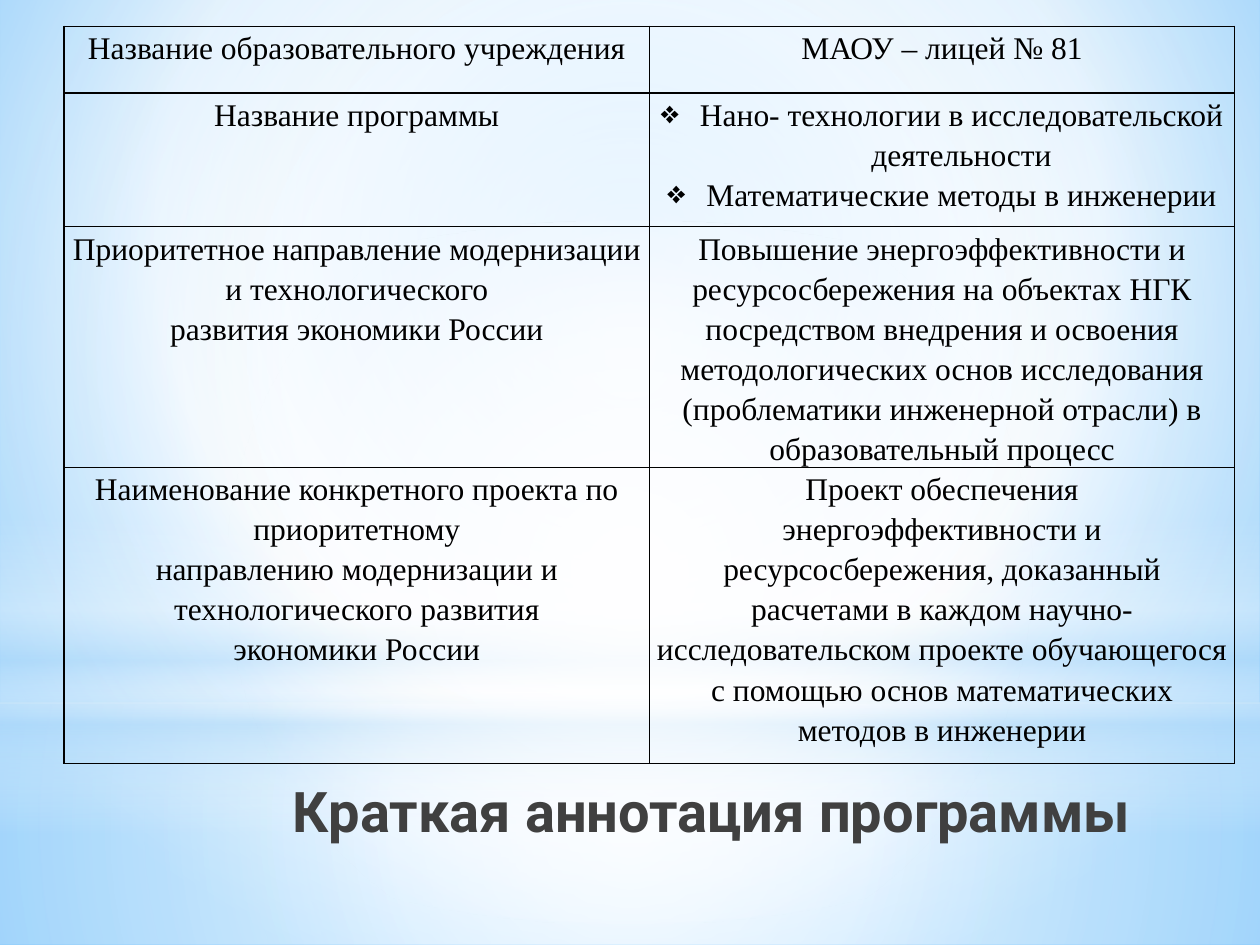
from lxml.etree import SubElement
from pptx import Presentation
from pptx.dml.color import RGBColor
from pptx.enum.shapes import MSO_SHAPE
from pptx.enum.text import MSO_ANCHOR, MSO_AUTO_SIZE, PP_ALIGN
from pptx.oxml.ns import qn
from pptx.util import Inches, Pt

COLORS = {
    "sky": "9ED5FF",
    "deep_sky": "5BB9FF",
    "haze": "B4DCFA",
    "white": "FFFFFF",
    "title": "404040",
    "ink": "000000",
}
TITLE = "Краткая аннотация программы"
BULLET = "❖"
ROW_HEIGHTS = (0.53, 1.06, 1.77, 2.35)
ROWS = [
    (["Название образовательного учреждения"], ["МАОУ – лицей № 81"]),
    (
        ["Название программы"],
        [
            BULLET + "Нано- технологии в исследовательской деятельности",
            BULLET + "Математические методы в инженерии",
        ],
    ),
    (
        [
            "Приоритетное направление модернизации и технологического",
            "развития экономики России",
        ],
        [
            "Повышение энергоэффективности и ресурсосбережения на объектах НГК "
            "посредством внедрения и освоения методологических основ исследования "
            "(проблематики инженерной отрасли) в образовательный процесс"
        ],
    ),
    (
        [
            "Наименование конкретного проекта по приоритетному",
            "направлению модернизации и технологического развития",
            "экономики России",
        ],
        [
            "Проект обеспечения энергоэффективности и ресурсосбережения, доказанный "
            "расчетами в каждом научно-исследовательском проекте обучающегося "
            "с помощью основ математических методов в инженерии"
        ],
    ),
]
CENTER = (50, 50, 50, 50)


def set_gradient(properties, stops, focus=None):
    solid = properties.find(qn("a:solidFill"))
    gradient = properties.makeelement(qn("a:gradFill"), {"rotWithShape": "1"})
    stop_list = SubElement(gradient, qn("a:gsLst"))
    for position, color, opacity in stops:
        stop = SubElement(stop_list, qn("a:gs"), pos=str(position * 1000))
        tint = SubElement(stop, qn("a:srgbClr"), val=COLORS[color])
        if opacity < 100:
            SubElement(tint, qn("a:alpha"), val=str(opacity * 1000))
    if focus:
        radial = SubElement(gradient, qn("a:path"), path="circle")
        edges = {side: str(value * 1000) for side, value in zip("ltrb", focus)}
        SubElement(radial, qn("a:fillToRect"), edges)
    else:
        SubElement(gradient, qn("a:lin"), ang="5400000", scaled="0")
    properties.replace(solid, gradient)


def add_glow(slide, box, stops, focus=CENTER, preset=MSO_SHAPE.RECTANGLE):
    shape = slide.shapes.add_shape(preset, *map(Inches, box))
    shape.shadow.inherit = False
    shape.line.fill.background()
    shape.fill.solid()
    set_gradient(shape.element.spPr, stops, focus)


def add_backdrop(slide, width, height):
    slide.background.fill.solid()
    set_gradient(
        slide.element.find(".//" + qn("p:bgPr")),
        [(0, "sky", 100), (60, "white", 100), (100, "deep_sky", 100)],
        (20, 10, 20, 60),
    )
    horizon = 5.58
    add_glow(slide, (0, horizon, width, height - horizon),
             [(0, "white", 91), (37, "white", 76), (100, "haze", 79)])
    add_glow(slide, (0, 0, width, horizon),
             [(0, "white", 89), (48, "white", 62), (100, "haze", 79)])
    add_glow(slide, (0, 4.12, width, 2.5),
             [(0, "white", 0), (29, "white", 30), (45, "haze", 40),
              (55, "white", 26), (65, "haze", 60), (100, "white", 0)], focus=None)
    add_glow(slide, (0, 1.75, width, horizon),
             [(0, "white", 100), (56, "white", 0)], preset=MSO_SHAPE.OVAL)


def format_run(run, font_name, size, color, bold=False):
    run.font.name = font_name
    run.font.size = Pt(size)
    run.font.bold = bold
    run.font.color.rgb = RGBColor.from_string(COLORS[color])


def place_title(slide, left, top, width, height):
    title = slide.shapes.title
    slide.shapes.element.append(title.element)
    title.left, title.top = Inches(left), Inches(top)
    title.width, title.height = Inches(width), Inches(height)
    text_frame = title.text_frame
    text_frame.text = TITLE
    text_frame.word_wrap = True
    text_frame.auto_size = MSO_AUTO_SIZE.NONE
    text_frame.vertical_anchor = MSO_ANCHOR.TOP
    paragraph = text_frame.paragraphs[0]
    paragraph.alignment = PP_ALIGN.RIGHT
    format_run(paragraph.runs[0], "Roboto", 32, "title", bold=True)


def set_borders(cell):
    properties = cell._tc.get_or_add_tcPr()
    for side in ("lnL", "lnR", "lnT", "lnB"):
        line = SubElement(properties, qn("a:" + side), w=str(Pt(1)))
        fill = SubElement(line, qn("a:solidFill"))
        SubElement(fill, qn("a:srgbClr"), val=COLORS["ink"])


def add_bullet(paragraph):
    indent = Inches(0.31)
    properties = paragraph._p.get_or_add_pPr()
    properties.set("marL", str(indent))
    properties.set("indent", str(-indent))
    SubElement(properties, qn("a:buChar"), char=BULLET)


def fill_cell(cell, lines):
    set_borders(cell)
    cell.fill.background()
    cell.margin_left = cell.margin_right = Inches(0.05)
    cell.margin_top = cell.margin_bottom = 0
    cell.text_frame.text = "\n".join(line.lstrip(BULLET) for line in lines)
    for paragraph, line in zip(cell.text_frame.paragraphs, lines):
        paragraph.alignment = PP_ALIGN.CENTER
        paragraph.line_spacing = 1.15
        if line.startswith(BULLET):
            add_bullet(paragraph)
        format_run(paragraph.runs[0], "Times New Roman", 18, "ink")


def add_program_table(slide, left, top, width):
    box = map(Inches, (left, top, width, sum(ROW_HEIGHTS)))
    table = slide.shapes.add_table(len(ROWS), 2, *box).table
    table.first_row = table.horz_banding = False
    for row, height, contents in zip(table.rows, ROW_HEIGHTS, ROWS):
        row.height = Inches(height)
        for cell, lines in zip(row.cells, contents):
            fill_cell(cell, lines)


def main():
    presentation = Presentation()
    presentation.slide_width, presentation.slide_height = Inches(10), Inches(7.5)
    slide = presentation.slides.add_slide(presentation.slide_layouts[5])
    add_backdrop(slide, 10, 7.5)
    place_title(slide, 1.96, 6.11, 7.12, 1.02)
    add_program_table(slide, 0.51, 0.21, 9.29)
    presentation.save("out.pptx")


if __name__ == "__main__":
    main()
